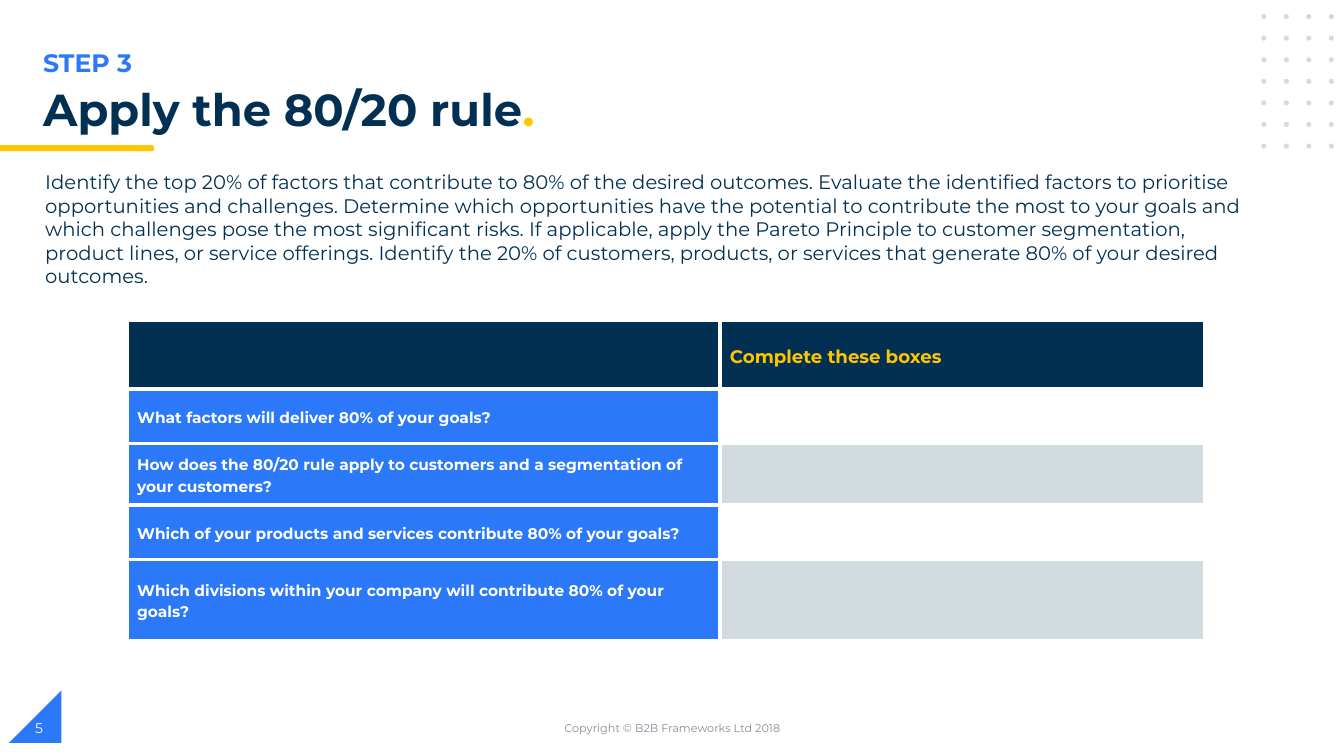
"""Build the Step 3 slide about the 80/20 rule."""
from lxml import etree
from pptx import Presentation
from pptx.dml.color import RGBColor
from pptx.enum.shapes import MSO_SHAPE
from pptx.enum.text import MSO_ANCHOR, PP_ALIGN
from pptx.oxml.ns import qn
from pptx.util import Inches, Pt

RECT, OVAL = MSO_SHAPE.RECTANGLE, MSO_SHAPE.OVAL
CAP, CORNER = MSO_SHAPE.FLOWCHART_TERMINATOR, MSO_SHAPE.RIGHT_TRIANGLE
TOP, MID = MSO_ANCHOR.TOP, MSO_ANCHOR.MIDDLE
LEFT, CENTER = PP_ALIGN.LEFT, PP_ALIGN.CENTER
FONT = "Montserrat"
NAVY, BLUE, GOLD = "023053", "2B79F8", "FFC600"
PALE, GREY, WHITE = "D1DBE0", "888C97", "FFFFFF"

STEP = "STEP 3"
TITLE = [("Apply the 80/20 rule", NAVY), (".", GOLD)]
INTRO = (
    "Identify the top 20% of factors that contribute to 80% of the desired outcomes. "
    "Evaluate the identified factors to prioritise opportunities and challenges. "
    "Determine which opportunities have the potential to contribute the most to your "
    "goals and which challenges pose the most significant risks. If applicable, apply "
    "the Pareto Principle to customer segmentation, product lines, or service offerings. "
    "Identify the 20% of customers, products, or services that generate 80% of your "
    "desired outcomes."
)
HEAD = "Complete these boxes"
ASKS = [
    ("What factors will deliver 80% of your goals?", 0.54),
    ("How does the 80/20 rule apply to customers and a segmentation of your customers?", 0.61),
    ("Which of your products and services contribute 80% of your goals?", 0.54),
    ("Which divisions within your company will contribute 80% of your goals?", 0.81),
]
HEAD_TALL = 0.68
COLS = [5.88, 4.81]
LEGAL = "Copyright © B2B Frameworks Ltd 2018"
PAGE = "5"


def color(code):
    return RGBColor.from_string(code)


def write(frame, runs, size=14, tone=NAVY, bold=False, align=LEFT, space=None):
    para = frame.paragraphs[0]
    para.alignment = align
    if space:
        para.line_spacing = space
    for text, hue in [(runs, tone)] if isinstance(runs, str) else runs:
        run = para.add_run()
        run.text = text
        run.font.name, run.font.size, run.font.bold = FONT, Pt(size), bold
        run.font.color.rgb = color(hue)


def label(slide, box, runs, anchor=TOP, **style):
    frame = slide.shapes.add_textbox(*map(Inches, box)).text_frame
    frame.word_wrap = True
    frame.vertical_anchor = anchor
    write(frame, runs, **style)


def shape(slide, kind, box, fill):
    item = slide.shapes.add_shape(kind, *map(Inches, box))
    item.shadow.inherit = False
    item.fill.solid()
    item.fill.fore_color.rgb = color(fill)
    item.line.fill.background()
    return item


def paint(cell, fill):
    cell.vertical_anchor = MID
    cell.margin_left = cell.margin_right = Inches(0.1)
    cell.margin_top = cell.margin_bottom = 0
    props = cell._tc.get_or_add_tcPr()
    for side in ("a:lnL", "a:lnR", "a:lnT", "a:lnB"):
        edge = etree.SubElement(props, qn(side), w=str(Pt(3)))
        solid = etree.SubElement(edge, qn("a:solidFill"))
        etree.SubElement(solid, qn("a:srgbClr"), val=WHITE)
    cell.fill.solid()
    cell.fill.fore_color.rgb = color(fill)


def form(slide):
    talls = [HEAD_TALL] + [tall for _, tall in ASKS]
    box = (1.26, 3.18, sum(COLS), sum(talls))
    table = slide.shapes.add_table(len(talls), len(COLS), *map(Inches, box)).table
    for col, wide in zip(table.columns, COLS):
        col.width = Inches(wide)
    for row, tall in zip(table.rows, talls):
        row.height = Inches(tall)
    for col in range(len(COLS)):
        paint(table.cell(0, col), NAVY)
    write(table.cell(0, 1).text_frame, HEAD, size=13, tone=GOLD, bold=True, space=1.15)
    for row, (ask, _) in enumerate(ASKS, 1):
        paint(table.cell(row, 0), BLUE)
        paint(table.cell(row, 1), WHITE if row % 2 else PALE)
        write(table.cell(row, 0).text_frame, ask, size=11, tone=WHITE, bold=True, space=1.15)


def main():
    deck = Presentation()
    deck.slide_width, deck.slide_height = Inches(13.33), Inches(7.5)
    slide = deck.slides.add_slide(deck.slide_layouts[6])
    corner = shape(slide, CORNER, (0.09, 6.85, 0.52, 0.52), BLUE)
    corner._element.spPr.find(qn("a:xfrm")).set("flipH", "1")
    shape(slide, CAP, (1.34, 1.44, 0.19, 0.06), GOLD)
    shape(slide, RECT, (0, 1.44, 1.41, 0.06), GOLD)
    for row in range(7):
        for col in range(4):
            shape(slide, OVAL, (12.51 + col * 0.223, 0.14 + row * 0.214, 0.05, 0.05), PALE)
    label(slide, (0.33, 0.42, 6.69, 0.4), STEP, size=18, tone=BLUE, bold=True)
    label(slide, (0.33, 0.82, 11.59, 0.56), TITLE, size=32, bold=True, space=0.9)
    label(slide, (0.35, 1.64, 12.23, 1.04), INTRO)
    form(slide)
    label(slide, (4.42, 7.02, 4.5, 0.4), LEGAL, MID, size=8, tone=GREY, align=CENTER)
    label(slide, (0.25, 7.02, 3, 0.4), PAGE, MID, size=10, tone=WHITE)
    deck.save("out.pptx")


if __name__ == "__main__":
    main()
